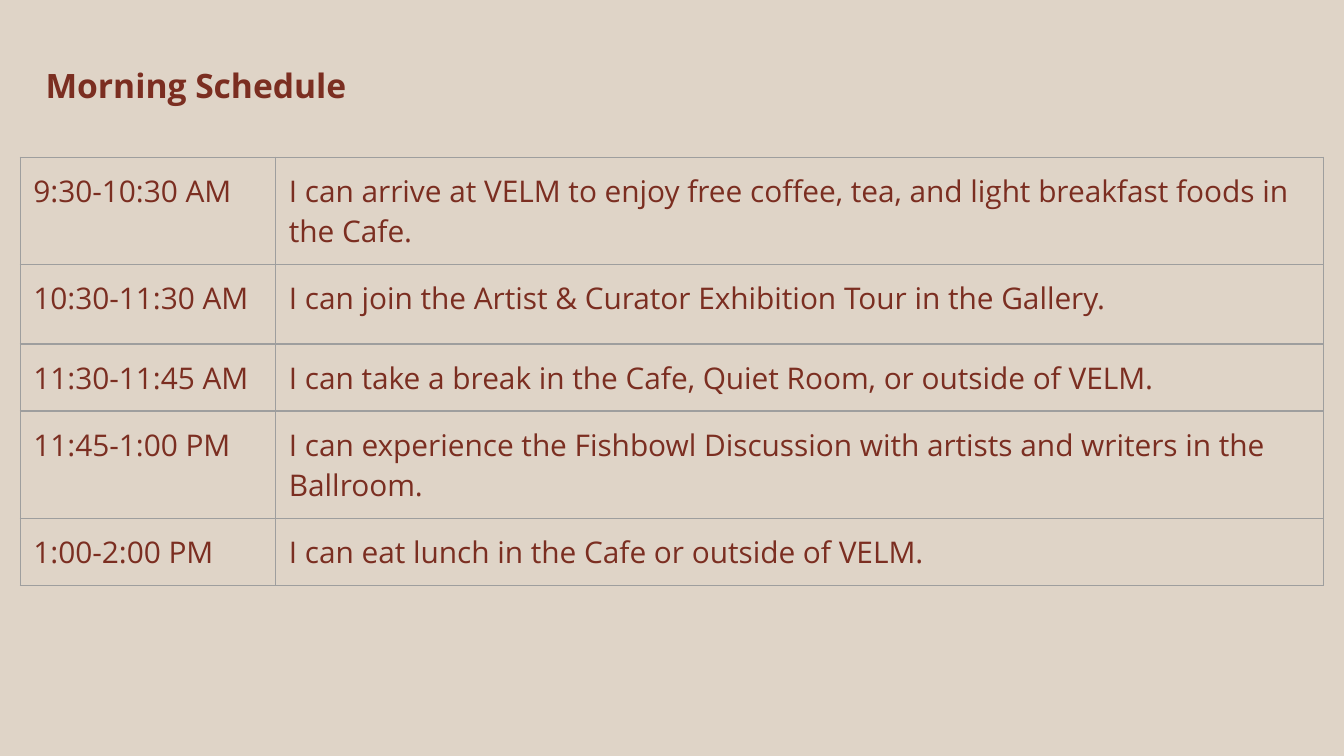
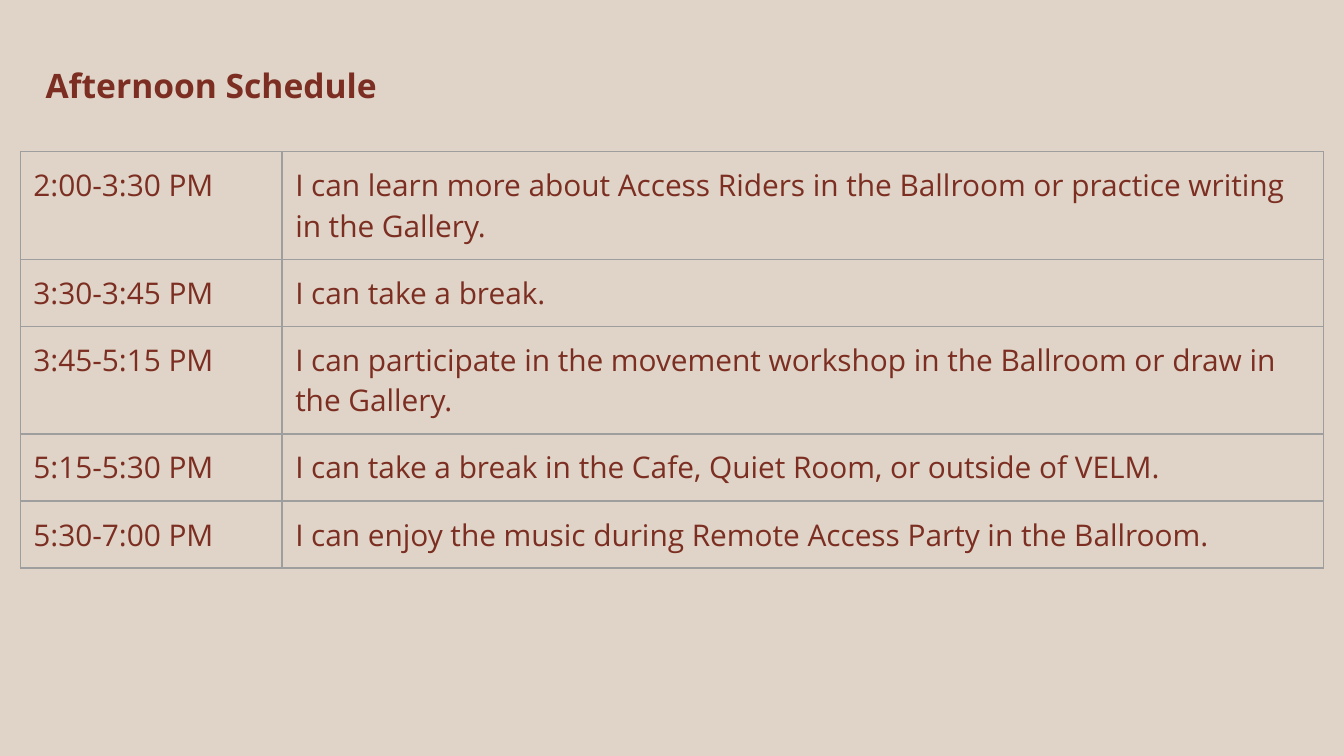
import dataclasses

import lxml.etree
import pptx
import pptx.dml.color
import pptx.enum.text
import pptx.oxml.ns
import pptx.util

Cm = pptx.util.Cm
Pt = pptx.util.Pt
RGB = pptx.dml.color.RGBColor.from_string


@dataclasses.dataclass(frozen=True)
class Theme:
    font: str = "Open Sans"
    paper: str = "DFD4C7"
    ink: str = "7B2E21"
    rule: str = "9E9E9E"
    rule_width: pptx.util.Length = Pt(0.75)
    title_size: pptx.util.Length = Pt(18)
    body_size: pptx.util.Length = Pt(16)


@dataclasses.dataclass(frozen=True)
class Session:
    time: str
    activity: str
    height: pptx.util.Length = Cm(0.97)


@dataclasses.dataclass(frozen=True)
class Schedule:
    title: str
    top: pptx.util.Length
    time_width: pptx.util.Length
    sessions: tuple[Session, ...]


THEME = Theme()
TITLE_ONLY = 5
INSET = Cm(0.25)
TABLE_LEFT = Cm(0.38)
TABLE_WIDTH = Cm(24.64)
TALL = Cm(1.5)

SCHEDULES = (
    Schedule("Morning Schedule", Cm(2.97), Cm(4.83), (
        Session("9:30-10:30 AM", "I can arrive at VELM to enjoy free coffee, tea, "
                "and light breakfast foods in the Cafe.", TALL),
        Session("10:30-11:30 AM", "I can join the Artist & Curator Exhibition Tour "
                "in the Gallery.", TALL),
        Session("11:30-11:45 AM", "I can take a break in the Cafe, Quiet Room, "
                "or outside of VELM."),
        Session("11:45-1:00 PM", "I can experience the Fishbowl Discussion with "
                "artists and writers in the Ballroom."),
        Session("1:00-2:00 PM", "I can eat lunch in the Cafe or outside of VELM."),
    )),
    Schedule("Afternoon Schedule", Cm(2.87), Cm(4.95), (
        Session("2:00-3:30 PM", "I can learn more about Access Riders in the "
                "Ballroom or practice writing in the Gallery.", TALL),
        Session("3:30-3:45 PM", "I can take a break."),
        Session("3:45-5:15 PM", "I can participate in the movement workshop in the "
                "Ballroom or draw in the Gallery.", TALL),
        Session("5:15-5:30 PM", "I can take a break in the Cafe, Quiet Room, "
                "or outside of VELM."),
        Session("5:30-7:00 PM", "I can enjoy the music during Remote Access Party "
                "in the Ballroom."),
    )),
)


def write_text(frame, text: str, *, size: pptx.util.Length, bold: bool = False) -> None:
    para = frame.paragraphs[0]
    para.alignment = pptx.enum.text.PP_ALIGN.LEFT
    span = para.add_run()
    span.text = text
    span.font.name = THEME.font
    span.font.size = size
    span.font.bold = bold
    span.font.color.rgb = RGB(THEME.ink)


def add_title(page, text: str) -> None:
    box = page.shapes.title
    box.left, box.top, box.width, box.height = Cm(0.61), Cm(0.97), Cm(23.24), Cm(1.14)
    frame = box.text_frame
    frame.auto_size = pptx.enum.text.MSO_AUTO_SIZE.NONE
    frame.vertical_anchor = pptx.enum.text.MSO_ANCHOR.TOP
    frame.word_wrap = True
    frame.margin_left = frame.margin_right = frame.margin_top = INSET
    frame.margin_bottom = 2 * INSET
    write_text(frame, text, size=THEME.title_size, bold=True)


def add_borders(cell) -> None:
    qn = pptx.oxml.ns.qn
    properties = cell._tc.get_or_add_tcPr()
    for side in ("L", "R", "T", "B"):
        line = lxml.etree.SubElement(properties, qn(f"a:ln{side}"), w=str(THEME.rule_width))
        fill = lxml.etree.SubElement(line, qn("a:solidFill"))
        lxml.etree.SubElement(fill, qn("a:srgbClr"), val=THEME.rule)


def fill_cell(cell, text: str) -> None:
    cell.margin_left = cell.margin_right = cell.margin_top = cell.margin_bottom = INSET
    cell.vertical_anchor = pptx.enum.text.MSO_ANCHOR.TOP
    add_borders(cell)
    cell.fill.background()
    write_text(cell.text_frame, text, size=THEME.body_size)


def add_schedule_table(page, schedule: Schedule) -> None:
    sessions = schedule.sessions
    height = sum(session.height for session in sessions)
    table = page.shapes.add_table(
        len(sessions), 2, TABLE_LEFT, schedule.top, TABLE_WIDTH, height).table
    table.first_row = table.horz_banding = False
    table.columns[0].width = schedule.time_width
    table.columns[1].width = TABLE_WIDTH - schedule.time_width
    for row, session in zip(table.rows, sessions):
        row.height = session.height
        for cell, text in zip(row.cells, (session.time, session.activity)):
            fill_cell(cell, text)


def main() -> None:
    deck = pptx.Presentation()
    deck.slide_width, deck.slide_height = Cm(25.4), Cm(14.29)
    background = deck.slide_master.background.fill
    background.solid()
    background.fore_color.rgb = RGB(THEME.paper)
    for schedule in SCHEDULES:
        page = deck.slides.add_slide(deck.slide_layouts[TITLE_ONLY])
        add_title(page, schedule.title)
        add_schedule_table(page, schedule)
    deck.save("out.pptx")


if __name__ == "__main__":
    main()
